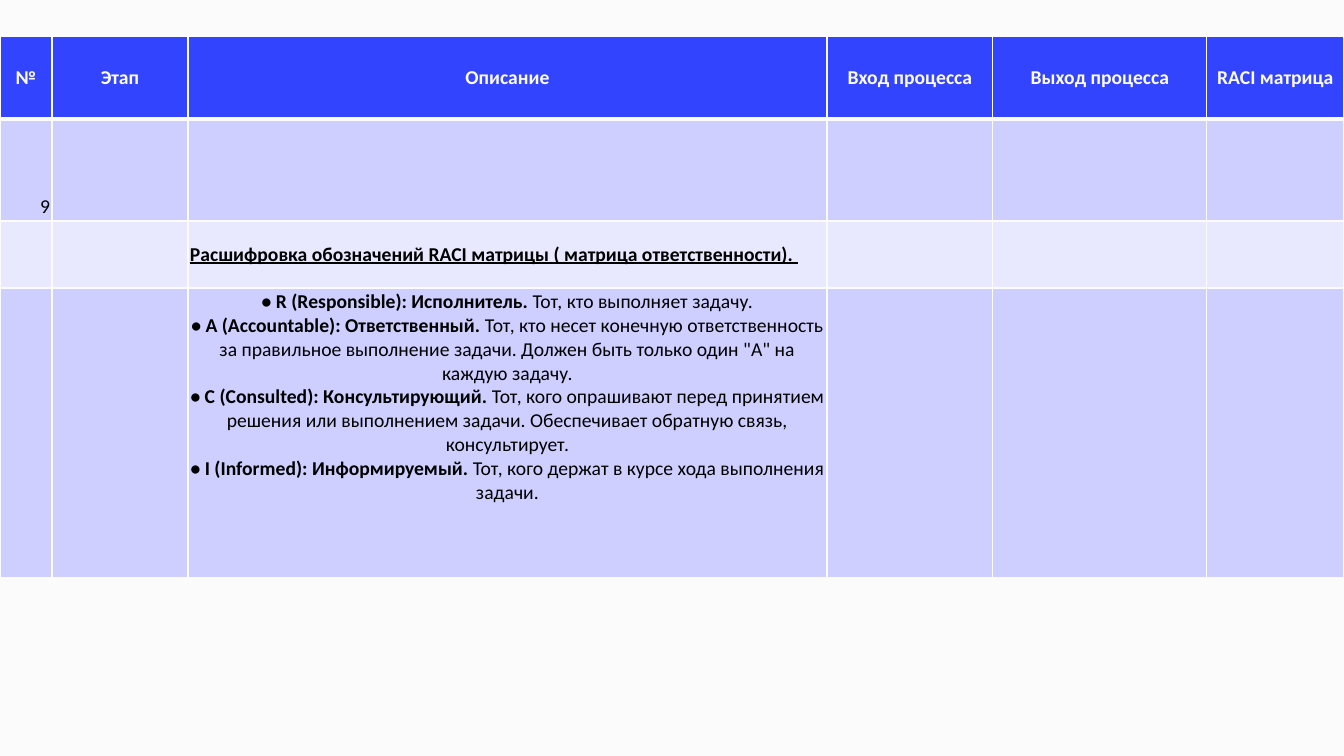
from lxml.etree import SubElement as Sub
from pptx import Presentation as Deck
from pptx.dml.color import RGBColor as Color
from pptx.enum.text import MSO_ANCHOR as Anchor, PP_ALIGN as Align
from pptx.oxml.ns import qn
from pptx.util import Pt

PX = 914400 / 100.8
HUES = {"page": "FBFBFB", "head": "3344FF", "odd": "CECFFF", "even": "E8E9FF", "text": "000000"}
COLS = [52, 136, 639, 166, 214, 137]
ROWS = [83, 102, 67, 290]
HEADS = ["№", "Этап", "Описание", "Вход процесса", "Выход процесса", "RACI матрица"]
TITLE = "Расшифровка обозначений RACI матрицы ( матрица ответственности). "
ROLES = [
    ("• R (Responsible): Исполнитель. ", "Тот, кто выполняет задачу."),
    ("• A (Accountable): Ответственный. ",
     "Тот, кто несет конечную ответственность за правильное выполнение задачи. "
     "Должен быть только один \"A\" на каждую задачу."),
    ("• C (Consulted): Консультирующий. ",
     "Тот, кого опрашивают перед принятием решения или выполнением задачи. "
     "Обеспечивает обратную связь, консультирует."),
    ("• I (Informed): Информируемый. ",
     "Тот, кого держат в курсе хода выполнения задачи."),
]


def emu(px):
    return round(px * PX)


def hue(name):
    return Color.from_string(HUES[name])


def style(run, tone="text", bold=False, line=False):
    font = run.font
    font.name, font.size = "Calibri", Pt(14)
    font.bold, font.underline = bold, line
    font.color.rgb = hue(tone)


def border(cell, base):
    props = cell._tc.get_or_add_tcPr()
    for side, width in zip("LRTB", (1, 1, 1, base)):
        edge = Sub(props, qn(f"a:ln{side}"), w=str(Pt(width)))
        fill = Sub(edge, qn("a:solidFill"))
        Sub(fill, qn("a:srgbClr"), val=HUES["page"])


def paint(cell, row):
    border(cell, 1 if row else 3)
    cell.fill.solid()
    cell.fill.fore_color.rgb = hue("head" if row == 0 else "odd" if row % 2 else "even")
    cell.margin_left = cell.margin_right = emu(2)
    cell.margin_top = cell.margin_bottom = emu(2)


def write(cell, text, align, anchor=Anchor.MIDDLE, **look):
    cell.text_frame.text = text
    cell.vertical_anchor = anchor
    para = cell.text_frame.paragraphs[0]
    para.alignment = align
    style(para.runs[0], **look)


def explain(cell, roles):
    frame = cell.text_frame
    cell.vertical_anchor = Anchor.TOP
    for i, parts in enumerate(roles):
        para = frame.add_paragraph() if i else frame.paragraphs[0]
        para.alignment = Align.CENTER
        for part, bold in zip(parts, (True, False)):
            run = para.add_run()
            run.text = part
            style(run, bold=bold)


def grid(slide):
    frame = slide.shapes.add_table(len(ROWS), len(COLS), 0, emu(36), emu(sum(COLS)), emu(sum(ROWS)))
    table = frame.table
    for col, width in zip(table.columns, COLS):
        col.width = emu(width)
    for i, height in enumerate(ROWS):
        table.rows[i].height = emu(height)
        for cell in table.rows[i].cells:
            paint(cell, i)
    return table


def main():
    deck = Deck()
    deck.slide_width, deck.slide_height = emu(1344), emu(756)
    slide = deck.slides.add_slide(deck.slide_layouts[6])
    slide.background.fill.solid()
    slide.background.fill.fore_color.rgb = hue("page")

    # Table header
    table = grid(slide)
    for i, head in enumerate(HEADS):
        write(table.cell(0, i), head, Align.CENTER, tone="page", bold=True)

    # Stage number and RACI legend
    write(table.cell(1, 0), "9", Align.RIGHT, Anchor.BOTTOM)
    write(table.cell(2, 2), TITLE, Align.LEFT, bold=True, line=True)
    explain(table.cell(3, 2), ROLES)

    deck.save("out.pptx")


if __name__ == "__main__":
    main()
